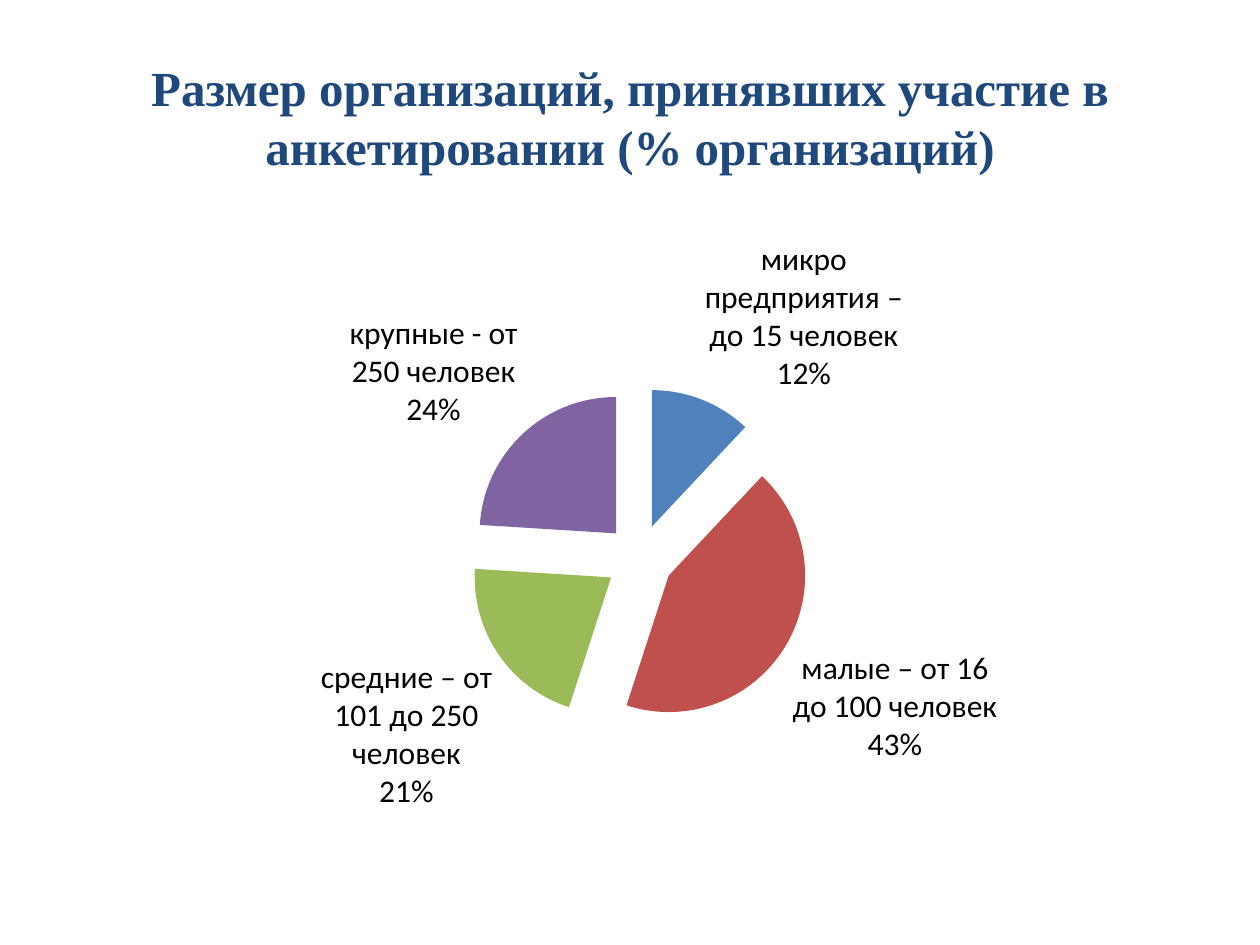
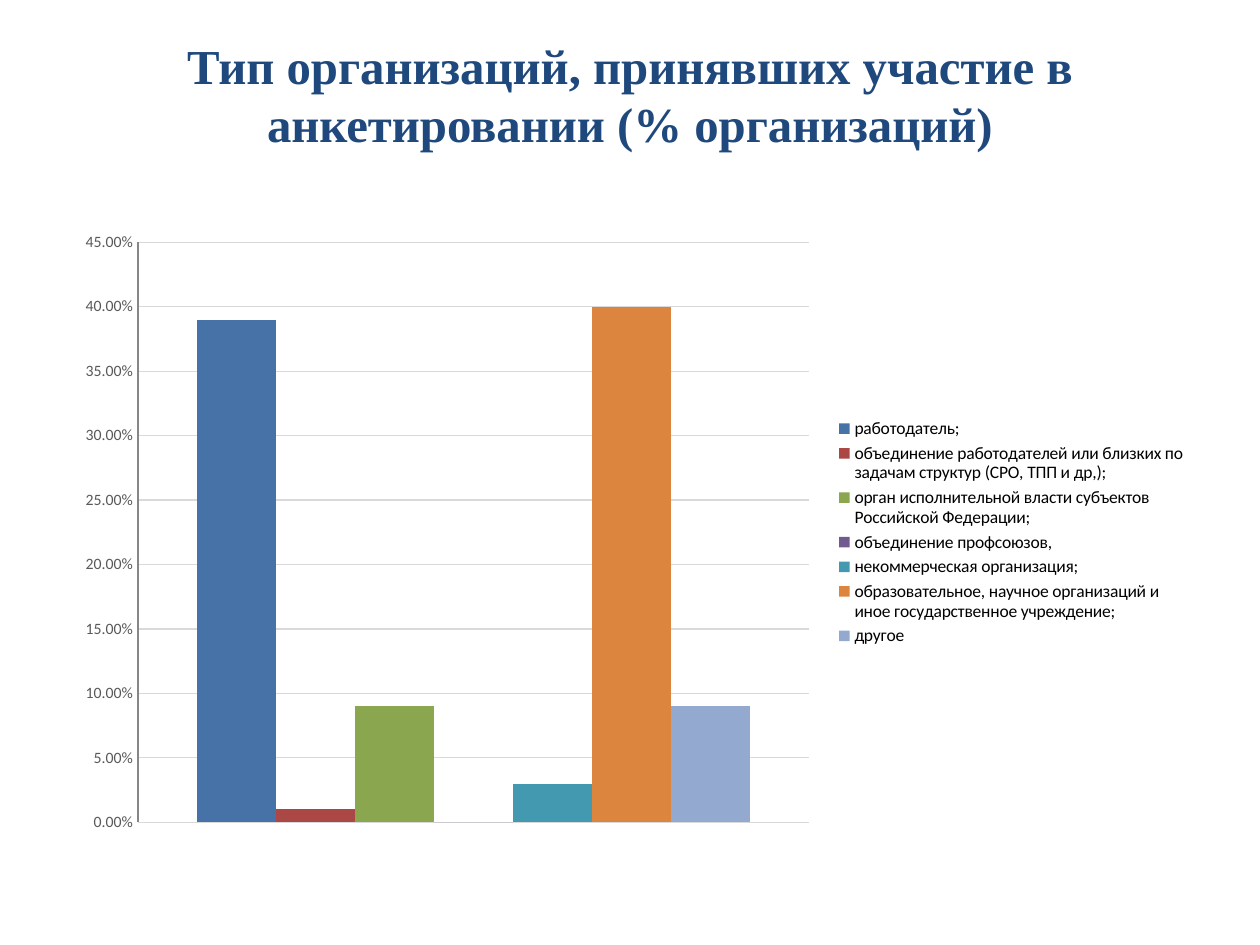
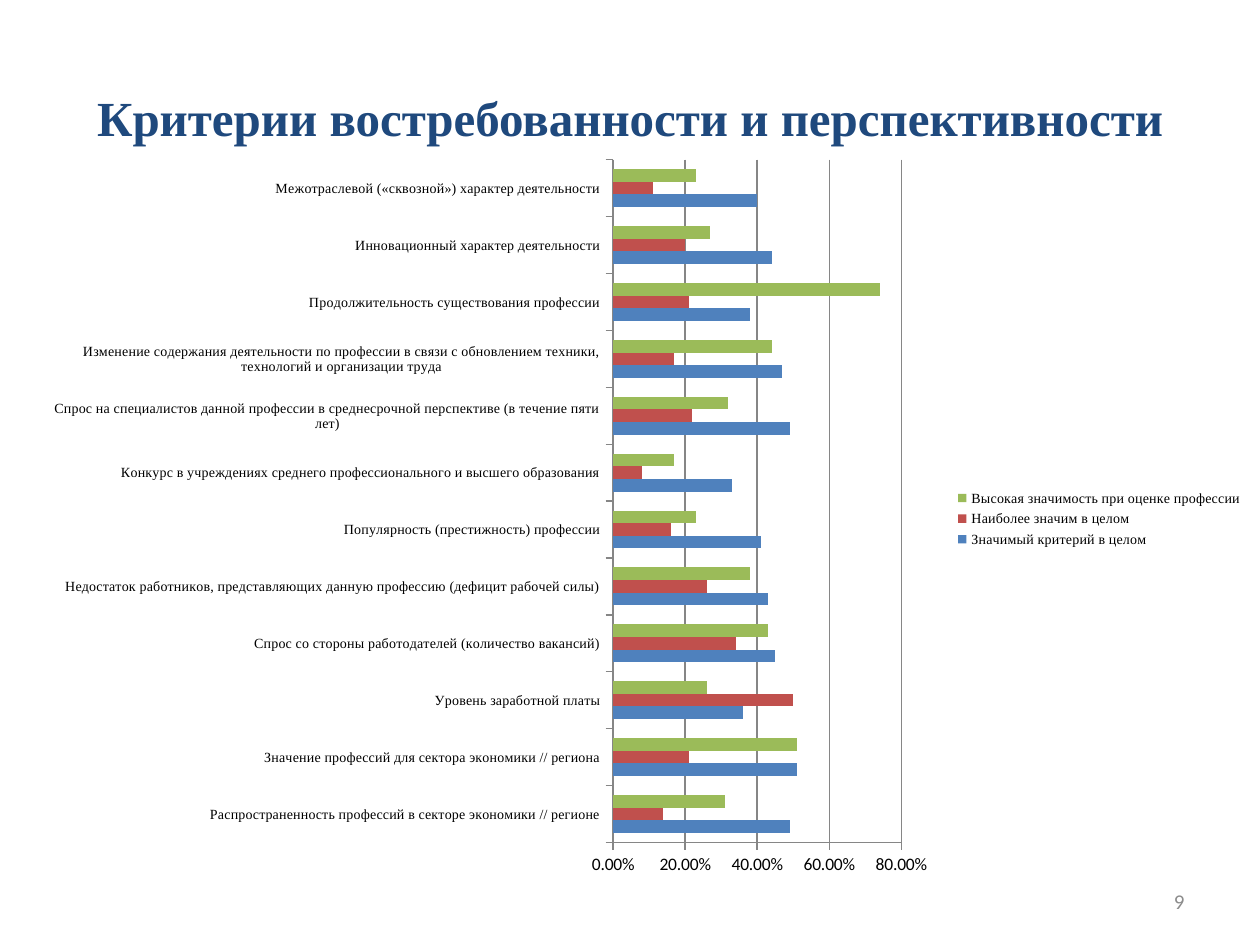
from lxml import etree
from pptx import Presentation
from pptx import util as u
from pptx.chart.data import CategoryChartData
from pptx.dml.color import RGBColor
from pptx.enum import chart as ch, text
from pptx.oxml import ns

NAVY = RGBColor(0x1F, 0x49, 0x7D)
BLACK = RGBColor(0, 0, 0)
FOOTER_GRAY = RGBColor(0x8C, 0x8C, 0x8C)
LABEL_GRAY = RGBColor(0x59, 0x59, 0x59)
PALE_GRID = RGBColor(0xD9, 0xD9, 0xD9)
AXIS_GRAY = RGBColor(0x86, 0x86, 0x86)
BLUE = RGBColor(0x4F, 0x81, 0xBD)
RED = RGBColor(0xC0, 0x50, 0x4D)
GREEN = RGBColor(0x9B, 0xBB, 0x59)
PURPLE = RGBColor(0x80, 0x64, 0xA2)
COLUMN_COLORS = [
    RGBColor(0x46, 0x72, 0xA8), RGBColor(0xAB, 0x47, 0x44),
    RGBColor(0x8A, 0xA6, 0x4F), RGBColor(0x72, 0x59, 0x90),
    RGBColor(0x42, 0x99, 0xB0), RGBColor(0xDC, 0x85, 0x3E),
    RGBColor(0x93, 0xA9, 0xCF),
]
SERIF, SANS = "Times New Roman", "Calibri"
CHART_AREA = (0.5, 1.75, 9, 4.95)

SIZES = {
    "микро предприятия – до 15 человек": 12,
    "малые – от 16 до 100 человек": 43,
    "средние – от 101 до 250 человек": 21,
    "крупные - от 250 человек": 24,
}
TYPES = {
    "работодатель;": [0.39],
    "объединение работодателей или близких по задачам структур (СРО, ТПП и др,);": [0.01],
    "орган исполнительной власти субъектов Российской Федерации;": [0.09],
    "объединение профсоюзов,": [0],
    "некоммерческая организация;": [0.03],
    "образовательное, научное организаций и иное государственное учреждение;": [0.4],
    "другое": [0.09],
}
CRITERIA = [
    "Распространенность профессий в секторе экономики // регионе",
    "Значение профессий для сектора экономики // региона",
    "Уровень заработной платы",
    "Спрос со стороны работодателей (количество вакансий)",
    "Недостаток работников, представляющих данную профессию (дефицит рабочей силы)",
    "Популярность (престижность) профессии",
    "Конкурс в учреждениях среднего профессионального и высшего образования",
    "Спрос на специалистов данной профессии в среднесрочной перспективе (в течение пяти лет)",
    "Изменение содержания деятельности по профессии в связи с обновлением техники, "
    "технологий и организации труда",
    "Продолжительность существования профессии",
    "Инновационный характер деятельности",
    "Межотраслевой («сквозной») характер деятельности",
]
RATINGS = {
    "Значимый критерий в целом":
        [0.49, 0.51, 0.36, 0.45, 0.43, 0.41, 0.33, 0.49, 0.47, 0.38, 0.44, 0.4],
    "Наиболее значим в целом":
        [0.14, 0.21, 0.5, 0.34, 0.26, 0.16, 0.08, 0.22, 0.17, 0.21, 0.2, 0.11],
    "Высокая значимость при оценке профессии":
        [0.31, 0.51, 0.26, 0.43, 0.38, 0.23, 0.17, 0.32, 0.44, 0.74, 0.27, 0.23],
}


def style_font(font, size, name=SANS, color=BLACK, bold=False):
    """Set the size, face, colour and weight of a font."""
    font.size, font.name, font.bold = u.Pt(size), name, bold
    font.color.rgb = color


def add_text(slide, words, area, align=text.PP_ALIGN.CENTER, **font):
    """Add a wrapped, vertically centred line of text."""
    box = slide.shapes.add_textbox(*map(u.Inches, area))
    frame = box.text_frame
    frame.word_wrap = True
    frame.vertical_anchor = text.MSO_ANCHOR.MIDDLE
    paragraph = frame.paragraphs[0]
    paragraph.text, paragraph.alignment = words, align
    style_font(paragraph.font, **font)


def add_titled_slide(deck, title, top=0.3, size=28):
    """Add a blank slide with the shared title style."""
    slide = deck.slides.add_slide(deck.slide_layouts[6])
    add_text(slide, title, (0.5, top, 9, 1.25),
             size=size, name=SERIF, color=NAVY, bold=True)
    return slide


def make_element(tag, **attributes):
    """Make one chart XML element."""
    return etree.Element(ns.qn(f"c:{tag}"), **attributes)


def place_part(part, index, area, inner=False):
    """Fix a chart part at fractions of the chart area."""
    for stale in part.findall(ns.qn("c:layout")):
        part.remove(stale)
    layout = make_element("layout")
    manual = make_element("manualLayout")
    layout.append(manual)
    if inner:
        manual.append(make_element("layoutTarget", val="inner"))
    for mode in ("xMode", "yMode"):
        manual.append(make_element(mode, val="edge"))
    for side, fraction in zip("xywh", area):
        manual.append(make_element(side, val=str(fraction)))
    part.insert(index, layout)


def add_chart(slide, kind, categories, series, area, plot_area=None, size=10,
              number_format="0.00%"):
    """Add a chart with the shared font and, if given, a fixed plot area."""
    data = CategoryChartData(number_format=number_format)
    data.categories = categories
    for name, values in series.items():
        data.add_series(name, values)
    chart = slide.shapes.add_chart(kind, *map(u.Inches, area), data).chart
    chart.has_title = chart.has_legend = False
    style_font(chart.font, size)
    if plot_area:
        place_part(chart.element.find(".//" + ns.qn("c:plotArea")), 0, plot_area, inner=True)
    return chart


def add_legend(chart, area, size, name=SANS):
    """Show the legend in a fixed place on the right."""
    chart.has_legend = True
    legend = chart.legend
    legend.position = ch.XL_LEGEND_POSITION.RIGHT
    legend.include_in_layout = False
    style_font(legend.font, size, name)
    place_part(chart.element.find(".//" + ns.qn("c:legend")), 1, area)


def style_bars(chart, colors, maximum, step, grid, tick):
    """Colour the bars and set the percent scale."""
    plot = chart.plots[0]
    plot.gap_width, plot.overlap, plot.vary_by_categories = 150, 0, False
    for series, color in zip(plot.series, colors):
        series.format.fill.solid()
        series.format.fill.fore_color.rgb = color
    scale = chart.value_axis
    scale.minimum_scale, scale.maximum_scale, scale.major_unit = 0, maximum, step
    scale.major_tick_mark = tick
    scale.tick_labels.number_format = "0.00%"
    scale.tick_labels.number_format_is_linked = False
    scale.has_major_gridlines = True
    for line, color in ((scale.major_gridlines.format.line, grid),
                        (scale.format.line, AXIS_GRAY),
                        (chart.category_axis.format.line, AXIS_GRAY)):
        line.color.rgb, line.width = color, u.Pt(0.75)


def add_size_pie(slide):
    """Add the exploded pie of organisation sizes."""
    chart = add_chart(slide, ch.XL_CHART_TYPE.PIE, list(SIZES),
                      {"Series 1": list(SIZES.values())}, CHART_AREA,
                      size=18, number_format="General")
    plot = chart.plots[0]
    plot.vary_by_categories = True
    sizes = plot.series[0]
    for index, color in enumerate((BLUE, RED, GREEN, PURPLE)):
        fill = sizes.points[index].format.fill
        fill.solid()
        fill.fore_color.rgb = color
    root = chart.element
    root.find(".//" + ns.qn("c:dPt")).addprevious(make_element("explosion", val="25"))
    plot.has_data_labels = True
    labels = plot.data_labels
    labels.show_value = False
    labels.show_percentage = labels.show_category_name = True
    labels.number_format, labels.number_format_is_linked = "0%", False
    labels.position = ch.XL_LABEL_POSITION.OUTSIDE_END
    style_font(labels.font, 18)
    separator = make_element("separator")
    separator.text = "\n"
    root.find(".//" + ns.qn("c:showPercent")).getparent().find(
        ns.qn("c:showBubbleSize")).addnext(separator)


def add_type_columns(slide):
    """Add the columns of organisation types."""
    chart = add_chart(slide, ch.XL_CHART_TYPE.COLUMN_CLUSTERED, ["1"], TYPES,
                      CHART_AREA, (0.066, 0.035, 0.592, 0.93))
    style_bars(chart, COLUMN_COLORS, 0.45, 0.05, PALE_GRID, ch.XL_TICK_MARK.NONE)
    chart.category_axis.visible = False
    style_font(chart.value_axis.tick_labels.font, 9, color=LABEL_GRAY)
    add_legend(chart, (0.682, 0.31, 0.308, 0.38), 10)


def add_criteria_bars(slide):
    """Add the bars that rate each criterion."""
    chart = add_chart(slide, ch.XL_CHART_TYPE.BAR_CLUSTERED, CRITERIA, RATINGS,
                      (0.35, 1.15, 9.65, 5.91), (0.468, 0.02, 0.237, 0.917))
    style_bars(chart, (BLUE, RED, GREEN), 0.8, 0.2, AXIS_GRAY, ch.XL_TICK_MARK.OUTSIDE)
    chart.category_axis.major_tick_mark = ch.XL_TICK_MARK.OUTSIDE
    style_font(chart.category_axis.tick_labels.font, 8, SERIF)
    add_legend(chart, (0.743, 0.457, 0.25, 0.09), 8, SERIF)


def main():
    """Build and save the survey slides."""
    deck = Presentation()
    deck.slide_width, deck.slide_height = u.Inches(10), u.Inches(7.5)
    add_size_pie(add_titled_slide(
        deck, "Размер организаций, принявших участие в анкетировании (% организаций)"))
    add_type_columns(add_titled_slide(
        deck, "Тип организаций, принявших участие в анкетировании (% организаций)",
        top=0.12, size=27.9))
    criteria = add_titled_slide(deck, "Критерии востребованности и перспективности")
    add_text(criteria, "9", (7.17, 6.95, 2.33, 0.4), text.PP_ALIGN.RIGHT,
             size=12, color=FOOTER_GRAY)
    add_criteria_bars(criteria)
    deck.save("out.pptx")


if __name__ == "__main__":
    main()
